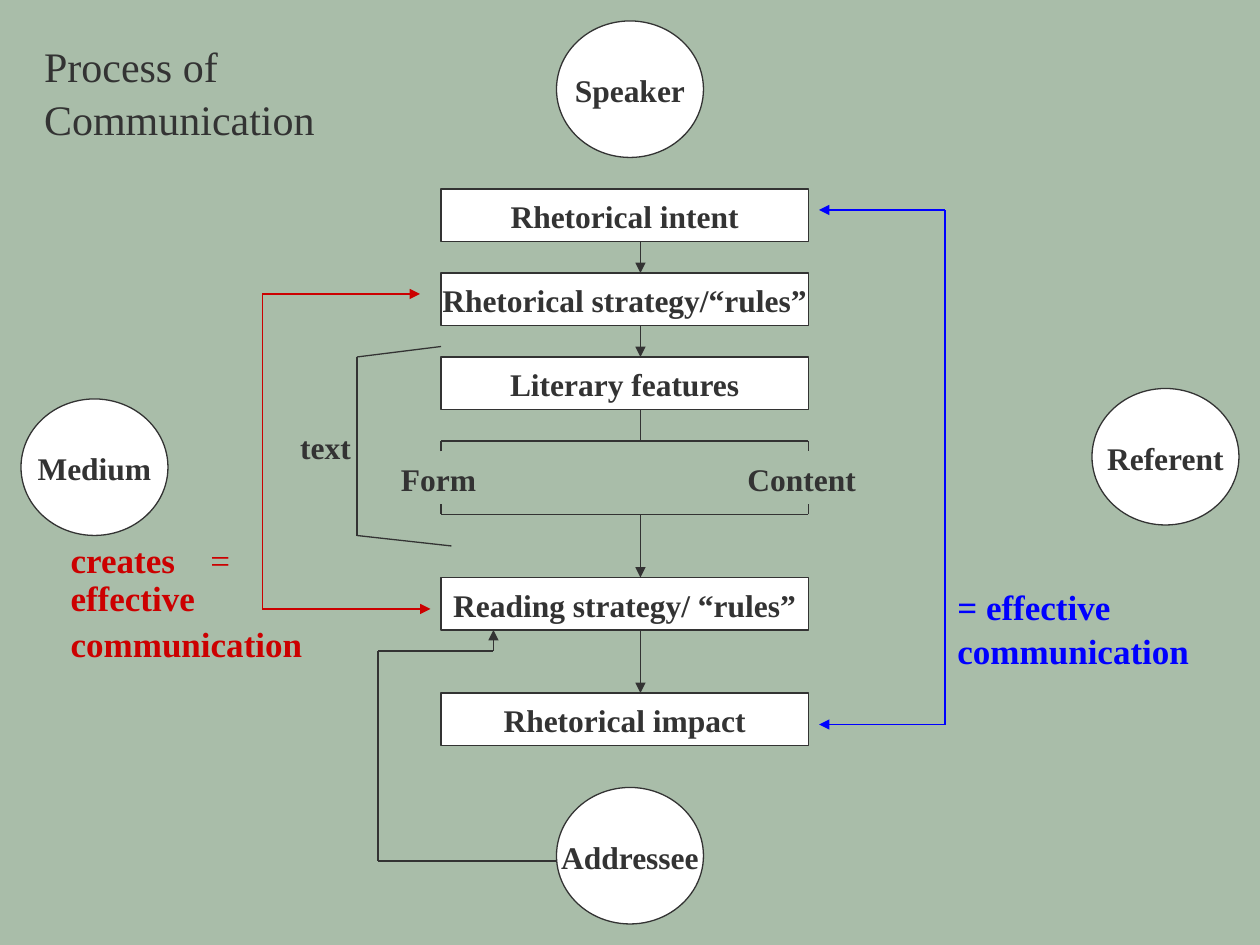
from itertools import pairwise
from typing import NamedTuple

from lxml.etree import SubElement
from pptx import Presentation
from pptx.dml.color import RGBColor
from pptx.enum.shapes import MSO_CONNECTOR, MSO_SHAPE
from pptx.enum.text import MSO_ANCHOR, MSO_AUTO_SIZE, PP_ALIGN
from pptx.oxml.ns import qn
from pptx.util import Inches, Pt

COLS, ROWS = 120, 90
DARK, RED, BLUE, WHITE, SAGE = "333333", "CC0000", "0000FF", "FFFFFF", "A9BDA9"
FONT = "Times New Roman"
LEADING = 1.05


class Node(NamedTuple):
    text: str
    col: int
    row: int


class Label(NamedTuple):
    text: str
    col: int
    row: int
    cols: int
    rows: float
    size: int = 18
    color: str = DARK
    align: PP_ALIGN = PP_ALIGN.LEFT


class Route(NamedTuple):
    points: list[tuple[int, int]]
    color: str = DARK
    start_arrow: bool = False
    end_arrow: bool = False


ROLES = [Node("Speaker", 53, 2), Node("Medium", 2, 38),
         Node("Referent", 104, 37), Node("Addressee", 53, 75)]
STEPS = [Node("Rhetorical intent", 42, 18),
         Node("Rhetorical strategy/“rules”", 42, 26),
         Node("Literary features", 42, 34),
         Node("Reading strategy/ “rules”", 42, 55),
         Node("Rhetorical impact", 42, 66)]
LABELS = [Label("Form", 37, 43, 12, 4.8),
          Label("Content", 70, 43, 13, 4.8),
          Label("text", 26, 40, 10, 4.8, align=PP_ALIGN.CENTER),
          Label("= effective communication", 90, 55, 35, 9.2, 20, BLUE)]
ROUTES = [
    *[Route([(61, top), (61, bottom)], end_arrow=True)
      for top, bottom in [(23, 26), (31, 34), (49, 55), (60, 66)]],
    Route([(61, 39), (61, 42)]),
    Route([(42, 43), (42, 42), (77, 42), (77, 43)]),
    Route([(42, 48), (42, 49), (77, 49), (77, 48)]),
    Route([(42, 33), (34, 34), (34, 51), (43, 52)]),
    Route([(78, 20), (90, 20), (90, 69), (78, 69)], BLUE, True, True),
    Route([(40, 28), (25, 28), (25, 58), (41, 58)], RED, True, True),
    Route([(53, 82), (36, 82), (36, 62), (47, 62), (47, 60)], end_arrow=True),
]

prs = Presentation()
prs.slide_width, prs.slide_height = Inches(10), Inches(7.5)
s = prs.slides.add_slide(prs.slide_layouts[5])


def x(col: float) -> int:
    return round(prs.slide_width * col / COLS)


def y(row: float) -> int:
    return round(prs.slide_height * row / ROWS)


def paint(fill, color: str) -> None:
    fill.solid()
    fill.fore_color.rgb = RGBColor.from_string(color)


def add_run(p, text: str, size: int, color: str = DARK, bold: bool = True) -> None:
    r = p.add_run()
    r.text = text
    r.font.name, r.font.size, r.font.bold = FONT, Pt(size), bold
    r.font.color.rgb = RGBColor.from_string(color)


def add_node(node: Node, kind: MSO_SHAPE, cols: int, rows: int) -> None:
    sp = s.shapes.add_shape(kind, x(node.col), y(node.row), x(cols), y(rows))
    sp.shadow.inherit = False
    paint(sp.fill, WHITE)
    paint(sp.line.fill, DARK)
    sp.line.width = Pt(0.75)
    tf = sp.text_frame
    tf.word_wrap, tf.vertical_anchor = False, MSO_ANCHOR.MIDDLE
    p = tf.paragraphs[0]
    p.alignment, p.line_spacing = PP_ALIGN.CENTER, LEADING
    add_run(p, node.text, 18)


def add_box(col: float, row: float, cols: float, rows: float):
    tf = s.shapes.add_textbox(x(col), y(row), x(cols), y(rows)).text_frame
    tf.word_wrap = True
    return tf


def add_label(label: Label) -> None:
    p = add_box(label.col, label.row, label.cols, label.rows).paragraphs[0]
    p.alignment, p.line_spacing = label.align, LEADING
    add_run(p, label.text, label.size, label.color)


def add_route(route: Route) -> None:
    """Join the points with straight lines, arrowed at the chosen ends."""
    last = len(route.points) - 2
    for i, ((c1, r1), (c2, r2)) in enumerate(pairwise(route.points)):
        line = s.shapes.add_connector(MSO_CONNECTOR.STRAIGHT, x(c1), y(r1), x(c2), y(r2))
        paint(line.line.fill, route.color)
        line.line.width = Pt(0.75)
        ln = line.line._get_or_add_ln()
        if route.start_arrow and i == 0:
            SubElement(ln, qn("a:headEnd"), type="triangle")
        if route.end_arrow and i == last:
            SubElement(ln, qn("a:tailEnd"), type="triangle")
        SubElement(line._element.spPr, qn("a:effectLst"))


def add_title(text: str) -> None:
    sp = s.shapes.title
    sp.left, sp.top, sp.width, sp.height = x(3), y(3), x(43), y(10.8)
    tf = sp.text_frame
    tf.word_wrap, tf.auto_size = True, MSO_AUTO_SIZE.NONE
    tf.vertical_anchor = MSO_ANCHOR.TOP
    p = tf.paragraphs[0]
    p.alignment, p.line_spacing = PP_ALIGN.LEFT, LEADING
    add_run(p, text, 24, bold=False)


def add_medium_note() -> None:
    tf = add_box(3, 52, 28, 12.6)
    tf.margin_left = Inches(0.31)
    lines = [("creates\t", 16), ("effective", 12), ("communication", 16)]
    for i, (text, leading) in enumerate(lines):
        p = tf.add_paragraph() if i else tf.paragraphs[0]
        p.line_spacing = Pt(leading)
        if i:
            p.space_before = Pt(10)
        else:
            tabs = SubElement(p._p.get_or_add_pPr(), qn("a:tabLst"))
            SubElement(tabs, qn("a:tab"), pos=str(Inches(1.11)), algn="l")
        add_run(p, text, 20, RED)
    add_run(tf.paragraphs[0], "=", 20, RED, bold=False)


paint(s.background.fill, SAGE)
add_title("Process of Communication")
for role in ROLES:
    add_node(role, MSO_SHAPE.OVAL, 14, 13)
for step in STEPS:
    add_node(step, MSO_SHAPE.RECTANGLE, 35, 5)
for route in ROUTES:
    add_route(route)
for label in LABELS:
    add_label(label)
add_medium_note()
prs.save("out.pptx")
